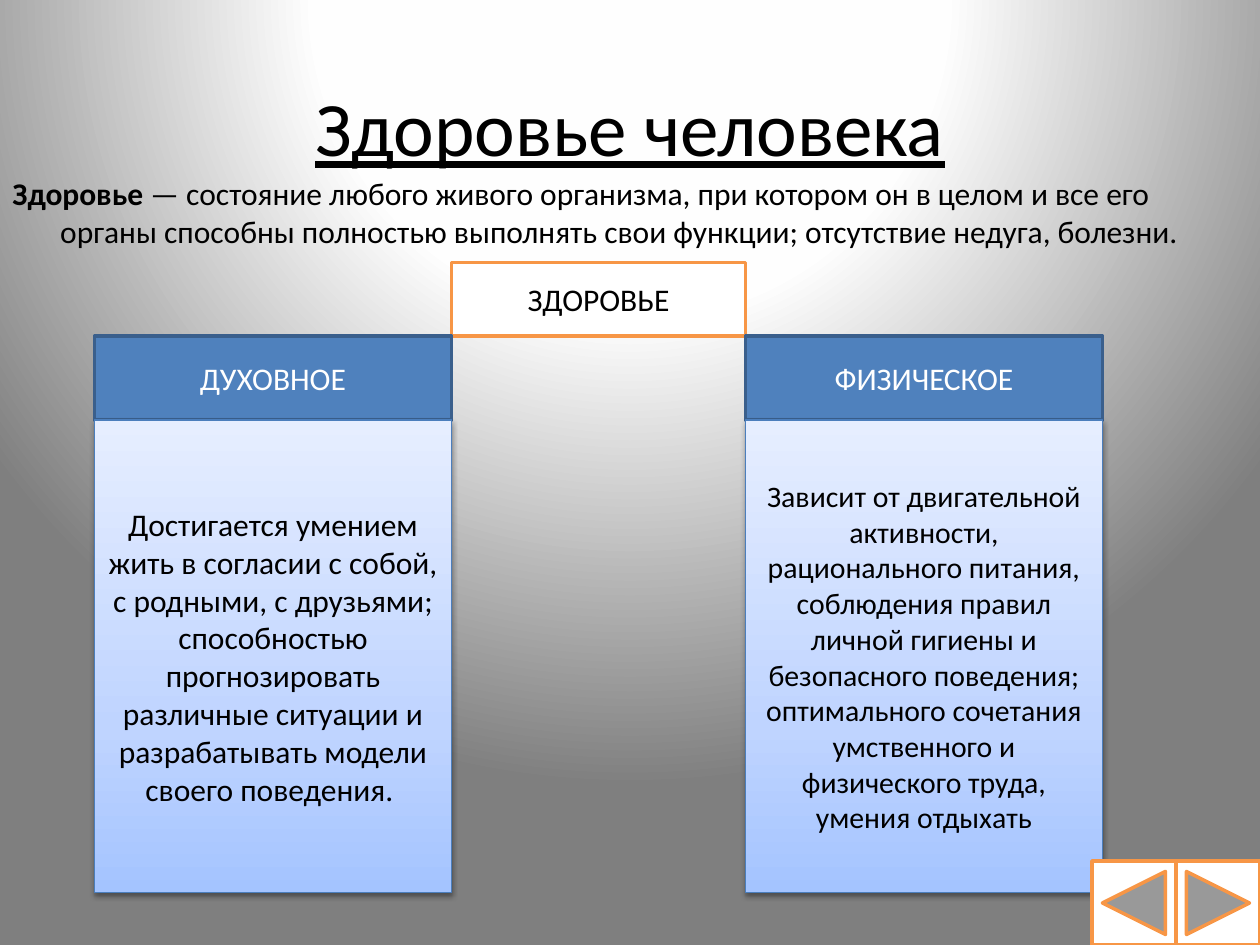
"""Build a one-slide scheme of human health with two columns and navigation buttons."""
from dataclasses import dataclass
from typing import Optional

from pptx import Presentation
from pptx.dml.color import RGBColor
from pptx.enum.shapes import MSO_SHAPE
from pptx.enum.text import MSO_ANCHOR, PP_ALIGN
from pptx.oxml import parse_xml
from pptx.oxml.ns import nsdecls, qn
from pptx.util import Inches, Pt

COLS, ROWS = 120, 90
WIDTH, HEIGHT = Inches(10), Inches(7.5)
COLUMN_XS, COLUMN_W = (9, 71), 34
ORANGE, BLACK, WHITE = "F79646", "000000", "FFFFFF"
PANEL_STOPS = ((0, "A4C4FF"), (35, "BFD4FF"), (100, "E6EEFF"))
BG_STOPS = ((0, "FFFFFF"), (40, "FEFEFE"), (100, "7F7F7F"))
UPWARD = '<a:lin ang="16200000" scaled="0"/>'
RADIAL = '<a:path path="circle"><a:fillToRect l="50000" t="-80000" r="50000" b="180000"/></a:path>'


@dataclass(frozen=True)
class Box:
    """A shape placed by grid column and row, with its look and text."""
    x: int
    y: int
    w: int
    h: int
    text: str = ""
    fill: Optional[str] = WHITE
    line: str = ORANGE
    line_w: float = 2
    color: str = BLACK
    size: int = 18
    kind: MSO_SHAPE = MSO_SHAPE.RECTANGLE


def rgb(value: str) -> RGBColor:
    """Turn a hex string into a colour."""
    return RGBColor.from_string(value)


def place(x: int, y: int, w: int, h: int) -> dict:
    """Turn grid units into slide lengths."""
    return {"left": WIDTH * x // COLS, "top": HEIGHT * y // ROWS,
            "width": WIDTH * w // COLS, "height": HEIGHT * h // ROWS}


def assign(obj, values: dict) -> None:
    """Set each named attribute of an object."""
    for name, value in values.items():
        setattr(obj, name, value)


def add_run(p, text: str, size: int, color: str, **extra) -> None:
    """Add a formatted run to a paragraph."""
    r = p.add_run()
    r.text = text
    assign(r.font, {"name": "Calibri", "size": Pt(size), **extra})
    r.font.color.rgb = rgb(color)


def set_gradient(fill, element, stops: tuple, direction: str) -> None:
    """Give a fill the listed gradient stops and direction."""
    fill.gradient()
    old = element.find(f".//{qn('a:gradFill')}")
    gs = "".join(f'<a:gs pos="{pos * 1000}"><a:srgbClr val="{c}"/></a:gs>' for pos, c in stops)
    new = parse_xml(f'<a:gradFill {nsdecls("a")} rotWithShape="1">'
                    f"<a:gsLst>{gs}</a:gsLst>{direction}</a:gradFill>")
    old.getparent().replace(old, new)


def add_shadow(sp) -> None:
    """Add a soft shadow below a shape."""
    effects = sp.element.find(f".//{qn('a:effectLst')}")
    effects.append(parse_xml(
        f'<a:outerShdw {nsdecls("a")} blurRad="40000" dist="20000" dir="5400000" rotWithShape="0">'
        '<a:srgbClr val="000000"><a:alpha val="38000"/></a:srgbClr></a:outerShdw>'))


def add_box(s, box: Box) -> None:
    """Draw a box; one without a plain fill is a shaded panel."""
    sp = s.shapes.add_shape(box.kind, **place(box.x, box.y, box.w, box.h))
    sp.shadow.inherit = False
    if box.fill:
        sp.fill.solid()
        sp.fill.fore_color.rgb = rgb(box.fill)
    else:
        set_gradient(sp.fill, sp.element, PANEL_STOPS, UPWARD)
        add_shadow(sp)
    sp.line.color.rgb = rgb(box.line)
    sp.line.width = Pt(box.line_w)
    if box.text:
        tf = sp.text_frame
        assign(tf, {"word_wrap": True, "vertical_anchor": MSO_ANCHOR.MIDDLE})
        p = tf.paragraphs[0]
        p.alignment = PP_ALIGN.CENTER
        add_run(p, box.text, box.size, box.color)


def add_title(s, text: str) -> None:
    """Place and format the slide title."""
    sp = s.shapes.title
    assign(sp, place(6, 5, 108, 14))
    sp.text_frame.vertical_anchor = MSO_ANCHOR.MIDDLE
    p = sp.text_frame.paragraphs[0]
    p.alignment = PP_ALIGN.CENTER
    add_run(p, text, 44, BLACK, underline=True)


def add_definition(s, term: str, meaning: str) -> None:
    """Add the definition with a hanging indent."""
    tf = s.shapes.add_textbox(**place(0, 16, 120, 71)).text_frame
    tf.word_wrap = True
    p = tf.paragraphs[0]
    p.space_before = Pt(3.6)
    pPr = p._p.get_or_add_pPr()
    pPr.set("marL", str(Inches(0.38)))
    pPr.set("indent", str(-Inches(0.38)))
    add_run(p, term, 18, BLACK, bold=True)
    add_run(p, meaning, 18, BLACK, bold=False)


HEADINGS = ("ДУХОВНОЕ", "ФИЗИЧЕСКОЕ")
PANELS = (
    ("Достигается умением жить в согласии с собой, с родными, с друзьями; способностью "
     "прогнозировать различные ситуации и разрабатывать модели своего поведения. ", 18),
    ("Зависит от двигательной активности, рационального питания, соблюдения правил личной "
     "гигиены и безопасного поведения; оптимального сочетания умственного и физического "
     "труда, умения отдыхать", 17),
)
BUTTONS = ((112, MSO_SHAPE.ACTION_BUTTON_FORWARD_OR_NEXT),
           (104, MSO_SHAPE.ACTION_BUTTON_BACK_OR_PREVIOUS))


def main() -> None:
    """Build and save the slide."""
    prs = Presentation()
    assign(prs, {"slide_width": WIDTH, "slide_height": HEIGHT})
    s = prs.slides.add_slide(prs.slide_layouts[5])
    set_gradient(s.background.fill, s.element, BG_STOPS, RADIAL)
    add_title(s, "Здоровье человека")
    add_definition(s, "Здоровье", " — состояние любого живого организма, при котором он в целом "
                   "и все его органы способны полностью выполнять свои функции; "
                   "отсутствие недуга, болезни.")
    add_box(s, Box(43, 25, 28, 7, "ЗДОРОВЬЕ"))
    for x, text in zip(COLUMN_XS, HEADINGS):
        add_box(s, Box(x, 32, COLUMN_W, 8, text, "4F81BD", "3A5F8C", color=WHITE))
    for x, (text, size) in zip(COLUMN_XS, PANELS):
        add_box(s, Box(x, 40, COLUMN_W, 45, text, None, "4B7EBC", 0.75, size=size))
    for x, kind in BUTTONS:
        add_box(s, Box(x, 82, 8, 8, kind=kind))
    prs.save("out.pptx")


if __name__ == "__main__":
    main()
